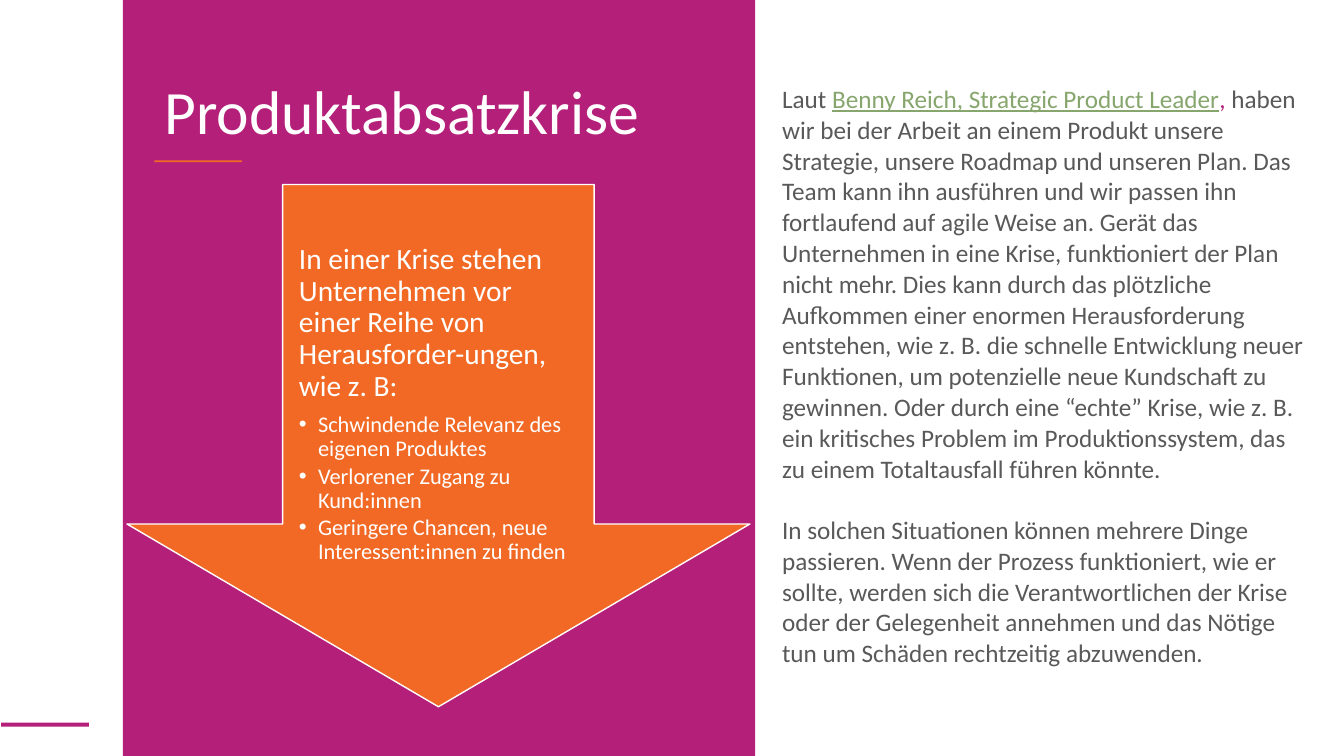
from lxml.etree import SubElement
from pptx import Presentation
from pptx.dml.color import RGBColor
from pptx.enum.shapes import MSO_SHAPE as Preset
from pptx.enum.text import MSO_ANCHOR as Anchor, MSO_AUTO_SIZE as AutoSize, PP_ALIGN as Align
from pptx.oxml.ns import qn
from pptx.util import Cm, Pt

MAGENTA = RGBColor(0xB4, 0x1F, 0x7A)
ORANGE = RGBColor(0xF1, 0x69, 0x24)
GREEN = RGBColor(0x87, 0xA6, 0x6E)
GREY = RGBColor(0x59, 0x59, 0x59)
WHITE = RGBColor(0xFF, 0xFF, 0xFF)
FONT = "Calibri"
RULE_WIDTH = 2.21

TITLE = "Produktabsatzkrise"
LEAD = "In einer Krise stehen Unternehmen vor einer Reihe von Herausforder-ungen, wie z. B:"
CHALLENGES = [
    "Schwindende Relevanz des eigenen Produktes",
    "Verlorener Zugang zu Kund:innen",
    "Geringere Chancen, neue Interessent:innen zu finden",
]
PLAN_SPANS = [
    ("Laut ", GREY, False),
    ("Benny Reich, Strategic Product Leader", GREEN, True),
    (", ", MAGENTA, False),
    ("haben wir bei der Arbeit an einem Produkt unsere Strategie, unsere Roadmap und unseren "
     "Plan. Das Team kann ihn ausführen und wir passen ihn fortlaufend auf agile Weise an. "
     "Gerät das Unternehmen in eine Krise, funktioniert der Plan nicht mehr. Dies kann durch "
     "das plötzliche Aufkommen einer enormen Herausforderung entstehen, wie z. B. die schnelle "
     "Entwicklung neuer Funktionen, um potenzielle neue Kundschaft zu gewinnen. Oder durch eine "
     "“echte” Krise, wie z. B. ein kritisches Problem im Produktionssystem, das zu einem "
     "Totaltausfall führen könnte.", GREY, False),
]
OUTCOME_SPANS = [
    ("In solchen Situationen können mehrere Dinge passieren. Wenn der Prozess funktioniert, "
     "wie er sollte, werden sich die Verantwortlichen der Krise oder der Gelegenheit annehmen "
     "und das Nötige tun um Schäden rechtzeitig abzuwenden.", GREY, False),
]


def add_block(page, preset, left, top, width, height, color):
    """Add a flat filled shape without outline."""
    block = page.shapes.add_shape(preset, Cm(left), Cm(top), Cm(width), Cm(height))
    block.shadow.inherit = False
    block.fill.solid()
    block.fill.fore_color.rgb = color
    block.line.fill.background()
    return block


def place_placeholder(holder, left, top, width, height):
    """Move a placeholder into its box and bring it to the front."""
    holder.left, holder.top, holder.width, holder.height = map(Cm, (left, top, width, height))
    holder.element.getparent().append(holder.element)
    frame = holder.text_frame
    frame.word_wrap = True
    frame.auto_size = AutoSize.NONE
    frame.vertical_anchor = Anchor.TOP
    return frame


def style_font(font, size, color):
    """Set face, size and colour of a font."""
    font.name, font.size, font.color.rgb = FONT, Pt(size), color


def style_paragraph(para, size, space_after, bullet=None):
    """Format one left-aligned paragraph, with a hanging bullet if given."""
    para.alignment = Align.LEFT
    para.line_spacing = 0.9
    para.space_before = Pt(0)
    para.space_after = Pt(space_after)
    indent = Cm(0.48) if bullet else 0
    properties = para._p.get_or_add_pPr()
    properties.set("marL", str(indent))
    properties.set("indent", str(-indent))
    if bullet:
        SubElement(properties, qn("a:buChar")).set("char", bullet)
    else:
        SubElement(properties, qn("a:buNone"))
    for span in para.runs:
        style_font(span.font, size, WHITE)


def add_title(page, left, top, width, height):
    """Write the title with its short rule beneath."""
    frame = place_placeholder(page.shapes.title, left, top, width, height)
    frame.text = TITLE
    style_paragraph(frame.paragraphs[0], 44, 0)
    add_block(page, Preset.RECTANGLE, left, top + 2.11, RULE_WIDTH, 0.05, ORANGE)


def add_challenge_arrow(page, left, top, width, height):
    """Draw the down arrow and put the list of challenges on its shaft."""
    arrow = add_block(page, Preset.DOWN_ARROW, left, top, width, height, ORANGE)
    arrow.adjustments[0], arrow.adjustments[1] = 0.5, 0.35
    arrow.line.color.rgb = WHITE
    arrow.line.width = Pt(1)
    frame = place_placeholder(page.placeholders[1], left + width / 4, top, width / 2, height * 0.83)
    frame.margin_left = frame.margin_right = frame.margin_bottom = Cm(0.41)
    frame.margin_top = Cm(1.5)
    frame.text = LEAD
    style_paragraph(frame.paragraphs[0], 21, 7.35)
    for challenge in CHALLENGES:
        para = frame.add_paragraph()
        para.text = challenge
        para.level = 1
        style_paragraph(para, 16, 2.4, "•")


def add_explanation(page, left, top, width, height):
    """Write the running text, one paragraph per list of spans."""
    box = page.shapes.add_textbox(Cm(left), Cm(top), Cm(width), Cm(height))
    frame = box.text_frame
    frame.word_wrap = True
    for number, spans in enumerate((PLAN_SPANS, OUTCOME_SPANS)):
        para = frame.add_paragraph() if number else frame.paragraphs[0]
        para.line_spacing = Pt(22)
        para.space_before = Pt(22 * number)
        for text, color, underlined in spans:
            span = para.add_run()
            span.text = text
            style_font(span.font, 18, color)
            span.font.underline = underlined


def main():
    """Build and save the slide."""
    deck = Presentation()
    deck.slide_width, deck.slide_height = Cm(33.87), Cm(19.05)
    page = deck.slides.add_slide(deck.slide_layouts[1])
    add_block(page, Preset.RECTANGLE, 3.1, 0, 15.93, 19.05, MAGENTA)
    add_block(page, Preset.RECTANGLE, 0.03, 18.21, RULE_WIDTH, 0.1, MAGENTA)
    add_title(page, 3.89, 1.93, 13.69, 2.72)
    add_challenge_arrow(page, 3.2, 4.65, 15.7, 13.16)
    add_explanation(page, 19.46, 1.96, 13.69, 15.11)
    deck.save("out.pptx")


if __name__ == "__main__":
    main()
